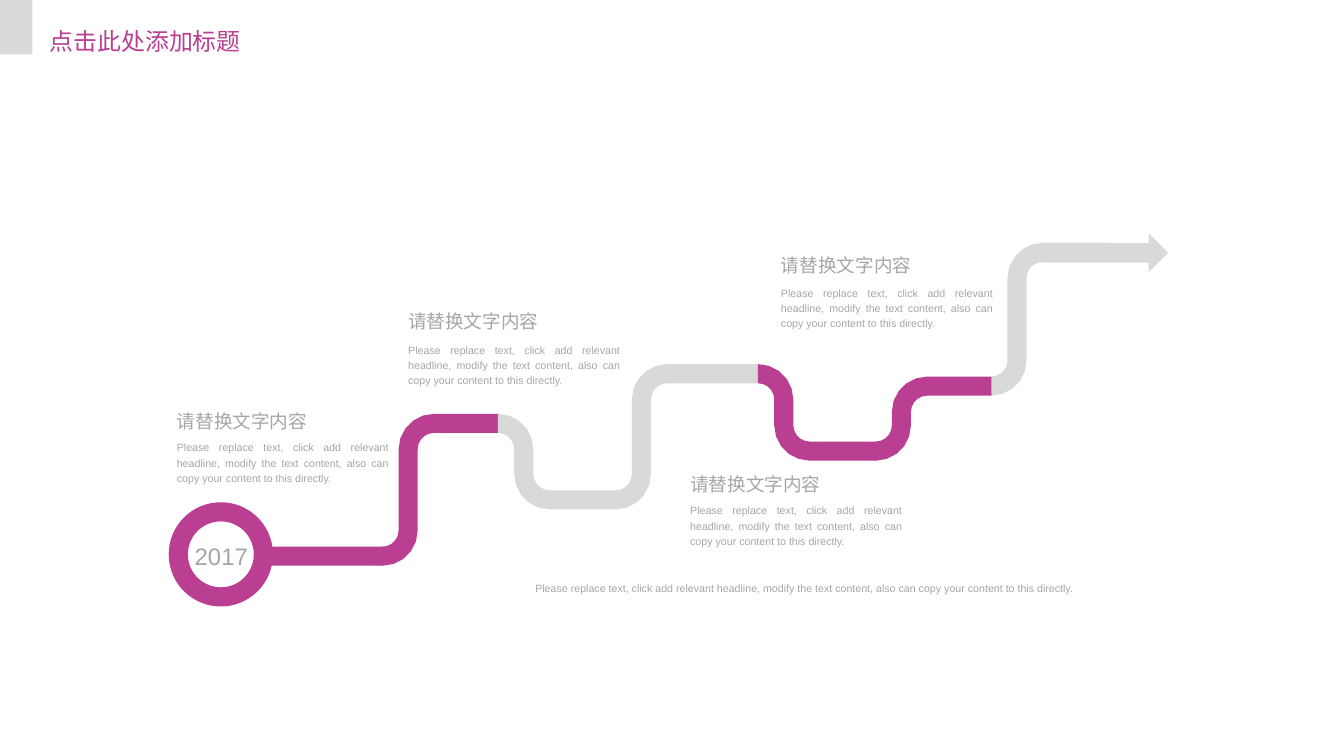
"""Build a timeline slide: a winding road from a year badge to an arrow, with four notes."""
import math

import pptx
import pptx.dml.color
import pptx.enum.shapes
import pptx.enum.text
import pptx.util

Color = pptx.dml.color.RGBColor
Preset = pptx.enum.shapes.MSO_SHAPE
Align = pptx.enum.text.PP_ALIGN
Anchor = pptx.enum.text.MSO_ANCHOR
inches = pptx.util.Inches

MAGENTA = Color(0xBA, 0x3E, 0x91)
SILVER = Color(0xD9, 0xD9, 0xD9)
GREY = Color(0xA6, 0xA6, 0xA6)
LATIN, CHINESE = "Arial", "Noto Sans CJK SC"

TITLE = "点击此处添加标题"
YEAR = "2017"
HEADING = "请替换文字内容"
BODY = ("Please replace text, click add relevant headline, modify the text content, "
        "also can copy your content to this directly.")

WIDTH, HEIGHT = 14.06, 7.91
ROAD, BEND, OVERLAP = 0.2, 0.27, 0.01
BADGE = 1.09
BADGE_CENTER = (2.31, 5.8)
NOTE_WIDTH = 2.22
NOTES = [(1.85, 4.24, 4.59, 1.75), (4.27, 3.2, 3.57, 1.83),
         (7.22, 4.9, 5.25, 1.91), (8.17, 2.61, 2.97, 1.97)]
STOPS = [(4, 5.82), (5.21, 4.43), (6.44, 5.23), (7.93, 3.91),
         (9.16, 4.72), (10.37, 4.04), (11.59, 2.64)]
ROAD_COLORS = [MAGENTA, SILVER, SILVER, MAGENTA, MAGENTA, SILVER]
ARC_STEPS = 5


def paint(shape, color):
    shape.shadow.inherit = False
    shape.fill.solid()
    shape.fill.fore_color.rgb = color
    shape.line.fill.background()
    return shape


def add_preset(page, preset, left, top, width, height, color):
    frame = [inches(length) for length in (left, top, width, height)]
    return paint(page.shapes.add_shape(preset, *frame), color)


def road_edge(start, end, offset):
    """Return one edge of an S-shaped road, offset sideways from its centre line."""
    (x0, y0), (x1, y1) = start, end
    turn = math.copysign(1, y1 - y0)
    first, second = BEND + offset, BEND - offset
    angles = [math.pi / 2 * step / ARC_STEPS for step in range(ARC_STEPS + 1)]
    points = [(x0 + first * math.sin(angle),
               y0 + turn * (BEND - first * math.cos(angle))) for angle in angles]
    points += [(x0 + 2 * BEND - second * math.cos(angle),
                y1 - turn * (BEND - second * math.sin(angle))) for angle in angles]
    return points + [(x1 + OVERLAP, y1 - turn * offset)]


def add_road(page, start, end, color):
    outline = road_edge(start, end, ROAD / 2) + road_edge(start, end, -ROAD / 2)[::-1]
    points = [(inches(x), inches(y)) for x, y in outline]
    builder = page.shapes.build_freeform(*points[0])
    builder.add_line_segments(points[1:], close=True)
    paint(builder.convert_to_shape(), color)


def add_text(page, text, left, top, width, height, size, color=GREY, font=LATIN,
             align=Align.LEFT, anchor=Anchor.TOP, margin=0, spacing=1.2):
    box = page.shapes.add_textbox(*[inches(n) for n in (left, top, width, height)])
    frame = box.text_frame
    frame.text = text
    frame.word_wrap = True
    frame.vertical_anchor = anchor
    frame.margin_left = frame.margin_right = inches(margin)
    frame.margin_top = frame.margin_bottom = inches(margin / 2)
    para = frame.paragraphs[0]
    para.alignment = align
    para.line_spacing = spacing
    span = para.runs[0]
    span.font.size = pptx.util.Pt(size)
    span.font.name = font
    span.font.color.rgb = color
    return para


def main():
    deck = pptx.Presentation()
    deck.slide_width, deck.slide_height = inches(WIDTH), inches(HEIGHT)
    page = deck.slides.add_slide(deck.slide_layouts[6])

    add_preset(page, Preset.RECTANGLE, 0, 0, 0.34, 0.57, SILVER)

    for start, end, color in zip(STOPS, STOPS[1:], ROAD_COLORS):
        add_road(page, start, end, color)

    center_x, center_y = BADGE_CENTER
    ring = add_preset(page, Preset.DONUT, center_x - BADGE / 2, center_y - BADGE / 2,
                      BADGE, BADGE, MAGENTA)
    ring.adjustments[0] = ROAD / BADGE
    add_text(page, YEAR, 1.86, 5.61, 0.91, 0.36, 18, align=Align.CENTER)

    road_x, road_y = STOPS[0]
    badge_right = 2.84
    add_preset(page, Preset.RECTANGLE, badge_right, road_y - ROAD / 2,
               road_x + OVERLAP - badge_right, ROAD, MAGENTA)
    add_preset(page, Preset.RIGHT_ARROW, 10.9, 2.44, 1.32, 0.41, SILVER)

    add_text(page, BODY, 5.6, 6.06, 6.76, 0.15, 8, align=Align.JUSTIFY)
    for left, heading_top, body_top, heading_width in NOTES:
        add_text(page, HEADING, left, heading_top, heading_width, 0.28, 14)
        add_text(page, BODY, left, body_top, NOTE_WIDTH, 0.48, 8,
                 align=Align.JUSTIFY, anchor=Anchor.MIDDLE)

    title = add_text(page, TITLE, 0.42, 0.23, 2.36, 0.39, 18, MAGENTA, CHINESE,
                     margin=0.1, spacing=1.0)
    title.space_before = pptx.util.Pt(10.6)

    deck.save("out.pptx")


if __name__ == "__main__":
    main()
